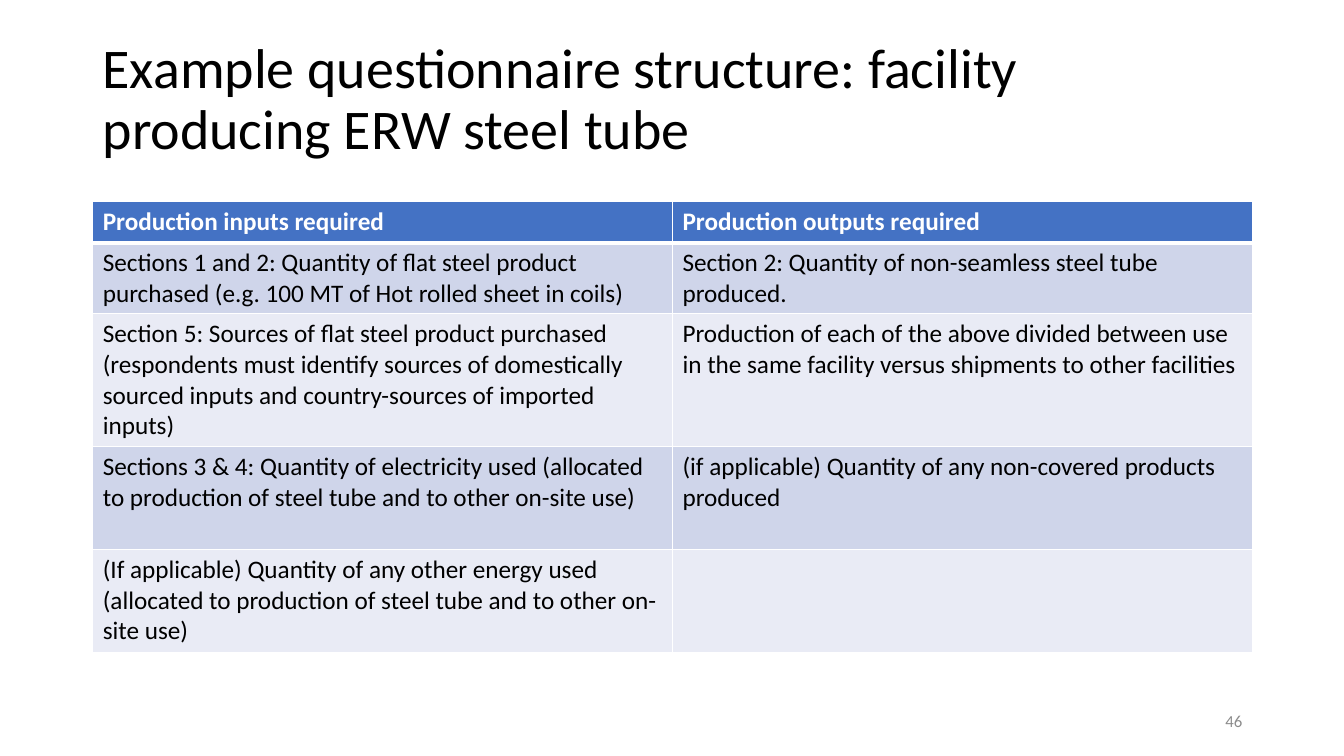
from lxml import etree
from pptx import Presentation
from pptx.dml.color import RGBColor
from pptx.enum import text
from pptx.oxml import ns
from pptx.util import Inches, Pt

TITLE = "Example questionnaire structure: facility producing ERW steel tube"
PAGE = "46"
ROWS = [
    ("Production inputs required", "Production outputs required"),
    ("Sections 1 and 2: Quantity of flat steel product purchased "
     "(e.g. 100 MT of Hot rolled sheet in coils)",
     "Section 2: Quantity of non-seamless steel tube produced."),
    ("Section 5: Sources of flat steel product purchased (respondents must identify "
     "sources of domestically sourced inputs and country-sources of imported inputs)",
     "Production of each of the above divided between use in the same facility "
     "versus shipments to other facilities"),
    ("Sections 3 & 4: Quantity of electricity used (allocated to production of "
     "steel tube and to other on-site use)",
     "(if applicable) Quantity of any non-covered products produced"),
    ("(If applicable) Quantity of any other energy used (allocated to production of "
     "steel tube and to other on-site use)", ""),
]
ROW_HEIGHTS = [0.41, 0.7, 1.32, 1.02, 1.02]
LEFT, WIDTH, TABLE_TOP = 0.92, 11.5, 2
HEADER_FILL, BANDS = "4472C4", ("CFD5EA", "E9EBF5")
FONT, BLACK, WHITE, GREY = "Calibri", "000000", "FFFFFF", "8C8C8C"


def rgb(value):
    return RGBColor.from_string(value)


def add_run(p, content, size, color, bold=False):
    r = p.add_run()
    r.text = content
    r.font.name, r.font.size, r.font.bold = FONT, Pt(size), bold
    r.font.color.rgb = rgb(color)


def add_text(s, box, content, size, color, align):
    tf = s.shapes.add_textbox(*map(Inches, box)).text_frame
    tf.word_wrap = True
    tf.vertical_anchor = text.MSO_ANCHOR.MIDDLE
    p = tf.paragraphs[0]
    p.alignment = align
    add_run(p, content, size, color)
    return p


def set_borders(cell, top, bottom):
    """White rules on all sides; top and bottom are widths in points."""
    tcPr = cell._tc.get_or_add_tcPr()
    for side, width in (("L", 1), ("R", 1), ("T", top), ("B", bottom)):
        ln = etree.SubElement(tcPr, ns.qn("a:ln" + side), w=str(Pt(width)))
        fill = etree.SubElement(ln, ns.qn("a:solidFill"))
        etree.SubElement(fill, ns.qn("a:srgbClr"), val=WHITE)


def add_questionnaire(s):
    table = s.shapes.add_table(len(ROWS), len(ROWS[0]), Inches(LEFT), Inches(TABLE_TOP),
                               Inches(WIDTH), Inches(sum(ROW_HEIGHTS))).table
    for i, (row, height) in enumerate(zip(ROWS, ROW_HEIGHTS)):
        table.rows[i].height = Inches(height)
        header = i == 0
        for j, content in enumerate(row):
            cell = table.cell(i, j)
            set_borders(cell, 3 if i == 1 else 1, 3 if header else 1)
            cell.fill.solid()
            cell.fill.fore_color.rgb = rgb(HEADER_FILL if header else BANDS[(i - 1) % 2])
            if content:
                add_run(cell.text_frame.paragraphs[0], content, 18,
                        WHITE if header else BLACK, header)


prs = Presentation()
prs.slide_width, prs.slide_height = Inches(13.33), Inches(7.5)
s = prs.slides.add_slide(prs.slide_layouts[6])
title = add_text(s, (LEFT, 0, WIDTH, 2), TITLE, 40, BLACK, text.PP_ALIGN.LEFT)
title.line_spacing = 0.9
add_questionnaire(s)
add_text(s, (LEFT + WIDTH - 3, 6.95, 3, 0.4), PAGE, 12, GREY, text.PP_ALIGN.RIGHT)
prs.save("out.pptx")
